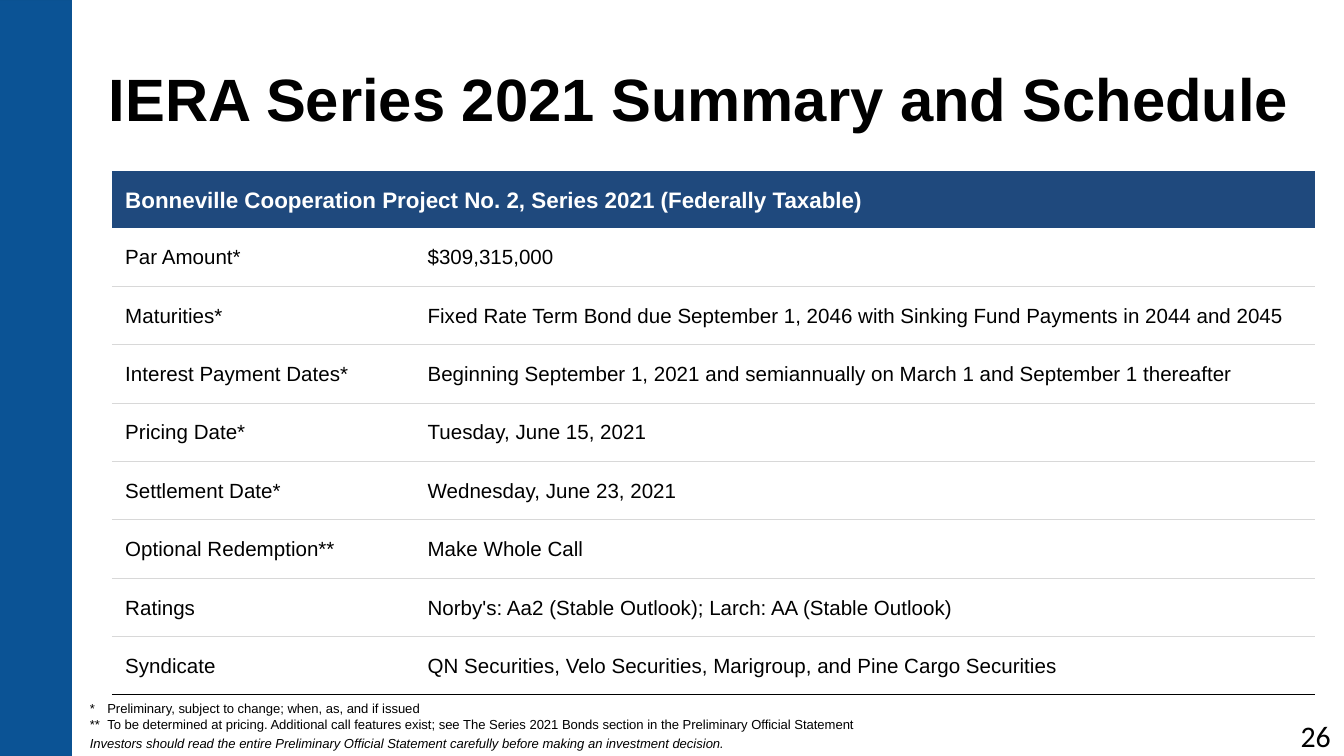
"""Build the bond series summary slide with its table and footnotes."""
from lxml import etree
from pptx import Presentation
from pptx.dml.color import RGBColor
from pptx.enum.shapes import MSO_SHAPE
from pptx.enum.text import MSO_ANCHOR, PP_ALIGN
from pptx.oxml.ns import qn
from pptx.util import Inches, Pt

RECT = MSO_SHAPE.RECTANGLE
TOP, MIDDLE = MSO_ANCHOR.TOP, MSO_ANCHOR.MIDDLE
LEFT, CENTER, RIGHT = PP_ALIGN.LEFT, PP_ALIGN.CENTER, PP_ALIGN.RIGHT
BLACK = RGBColor(0, 0, 0)
WHITE = RGBColor(255, 255, 255)
BLUE = RGBColor(0x0B, 0x53, 0x95)
EDGE = RGBColor(0x0B, 0x52, 0x92)
NAVY = RGBColor(0x1F, 0x49, 0x7D)
GREY = RGBColor(0xD8, 0xD8, 0xD8)

prs = Presentation()
prs.slide_width = Inches(10)
prs.slide_height = prs.slide_width * 9 // 16
COL, ROW = prs.slide_width / 100, prs.slide_height / 100
s = prs.slides.add_slide(prs.slide_layouts[6])


def grid(x, y, w, h):
    return int(x * COL), int(y * ROW), int(w * COL), int(h * ROW)


def style(p, size, color=BLACK, name="Arial", bold=False, italic=False):
    for r in p.runs:
        f = r.font
        f.size, f.name, f.bold, f.italic = Pt(size), name, bold, italic
        f.color.rgb = color


bar = s.shapes.add_shape(RECT, *grid(-0.1, 0, 5.4, 100))
bar.shadow.inherit = False
bar.fill.solid()
bar.fill.fore_color.rgb = BLUE
bar.line.color.rgb = EDGE
bar.line.width = Pt(1)

notes = [
    "*\tPreliminary, subject to change; when, as, and if issued",
    "**\tTo be determined at pricing. Additional call features exist; see "
    "The Series 2021 Bonds section in the Preliminary Official Statement",
]
advice = ("Investors should read the entire Preliminary Official Statement "
          "carefully before making an investment decision.")
boxes = [
    ((6.8, 4.1, 90.5, 18.7), ["IERA Series 2021 Summary and Schedule"],
     MIDDLE, CENTER, 0.9, dict(size=32, bold=True)),
    ((77.5, 94.66, 22.5, 5.34), ["26"],
     MIDDLE, RIGHT, 1.0, dict(size=16, name="Calibri")),
    ((5.7, 91.8, 60.8, 5.5), notes, TOP, LEFT, 1.0, dict(size=7)),
    ((5.7, 96.4, 62.4, 3.7), [advice], TOP, LEFT, 1.0,
     dict(size=7, italic=True)),
]
for place, lines, anchor, align, spacing, look in boxes:
    tf = s.shapes.add_textbox(*grid(*place)).text_frame
    tf.word_wrap = True
    tf.vertical_anchor = anchor
    tf.text = "\n".join(lines)
    for p in tf.paragraphs:
        p.alignment = align
        p.line_spacing = spacing
        if "\t" in p.text:
            tabs = etree.SubElement(p._p.get_or_add_pPr(), qn("a:tabLst"))
            etree.SubElement(tabs, qn("a:tab"), pos=str(int(1.3 * COL)), algn="l")
        style(p, **look)

rows = [
    ("Bonneville Cooperation Project No. 2, Series 2021 (Federally Taxable)", ""),
    ("Par Amount*", "$309,315,000"),
    ("Maturities*", "Fixed Rate Term Bond due September 1, 2046 with "
                    "Sinking Fund Payments in 2044 and 2045"),
    ("Interest Payment Dates*", "Beginning September 1, 2021 and semiannually "
                                "on March 1 and September 1 thereafter"),
    ("Pricing Date*", "Tuesday, June 15, 2021"),
    ("Settlement Date*", "Wednesday, June 23, 2021"),
    ("Optional Redemption**", "Make Whole Call"),
    ("Ratings", "Norby's: Aa2 (Stable Outlook); Larch: AA (Stable Outlook)"),
    ("Syndicate", "QN Securities, Velo Securities, Marigroup, "
                  "and Pine Cargo Securities"),
]
last = len(rows) - 1
table = s.shapes.add_table(len(rows), 2, *grid(8.32, 22.65, 89.5, 69.3)).table
table.horz_banding = False
for column, share in zip(table.columns, (23.4, 66.1)):
    column.width = int(share * COL)
for i, row in enumerate(table.rows):
    row.height = int((7.5 if i == 0 else 61.8 / last) * ROW)
    for j, cell in enumerate(row.cells):
        cell.text = rows[i][j]
        cell.vertical_anchor = MIDDLE
        cell.margin_left = Inches(0.01 if j else 0.1)
        cell.margin_top = cell.margin_right = Inches(0.01)
        cell.margin_bottom = 0
        cell.fill.solid()
        cell.fill.fore_color.rgb = WHITE if i else NAVY
        style(cell.text_frame.paragraphs[0], 11 if i else 12,
              BLACK if i else WHITE, bold=i == 0)
        edges = {"lnL": None, "lnR": None,
                 "lnT": GREY if i > 1 else None,
                 "lnB": BLACK if i == last else GREY if i else None}
        for k, (tag, color) in enumerate(edges.items()):
            ln = etree.Element(qn("a:" + tag), w=str(Pt(0.5)))
            if color is None:
                etree.SubElement(ln, qn("a:noFill"))
            else:
                fill = etree.SubElement(ln, qn("a:solidFill"))
                etree.SubElement(fill, qn("a:srgbClr"), val=str(color))
            cell._tc.get_or_add_tcPr().insert(k, ln)
table.cell(0, 0).merge(table.cell(0, 1))

prs.save("out.pptx")
